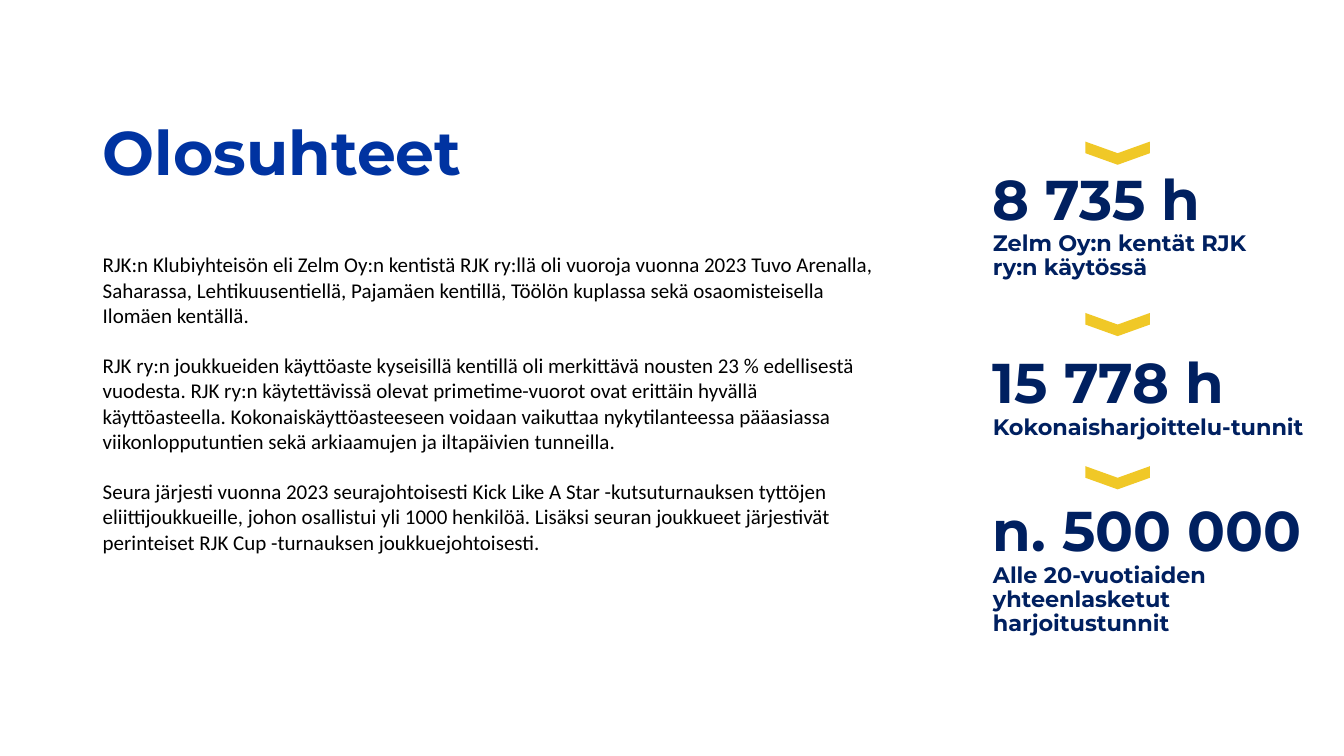
"""Build the Olosuhteet slide with body text and three key figures."""
from dataclasses import dataclass

from pptx import Presentation
from pptx.dml.color import RGBColor
from pptx.enum.shapes import MSO_SHAPE
from pptx.enum.text import MSO_ANCHOR, MSO_AUTO_SIZE, PP_ALIGN
from pptx.slide import Slide
from pptx.text.text import TextFrame
from pptx.util import Emu, Pt

BLUE = RGBColor(0x00, 0x33, 0xA1)
NAVY = RGBColor(0x00, 0x20, 0x60)
YELLOW = RGBColor(0xF0, 0xC8, 0x27)
BLACK = RGBColor(0x00, 0x00, 0x00)
HEAD_FONT = "Montserrat"
BODY_FONT = "Calibri"


@dataclass(frozen=True)
class Stat:
    value: str
    label: str
    top: int
    width: int
    chevron_top: int


STATS = [
    Stat("8 735 h", "Zelm Oy:n kentät RJK ry:n käytössä", 205, 303, 120),
    Stat("15 778 h", "Kokonaisharjoittelu-tunnit", 375, 333, 290),
    Stat("n. 500 000", "Alle 20-vuotiaiden yhteenlasketut harjoitustunnit",
         546, 333, 442),
]

BODY = [
    "RJK:n Klubiyhteisön eli Zelm Oy:n kentistä RJK ry:llä oli vuoroja vuonna "
    "2023 Tuvo Arenalla, Saharassa, Lehtikuusentiellä, Pajamäen kentillä, "
    "Töölön kuplassa sekä osaomisteisella Ilomäen kentällä.",
    "RJK ry:n joukkueiden käyttöaste kyseisillä kentillä oli merkittävä "
    "nousten 23 % edellisestä vuodesta. RJK ry:n käytettävissä olevat "
    "primetime-vuorot ovat erittäin hyvällä käyttöasteella. "
    "Kokonaiskäyttöasteeseen voidaan vaikuttaa nykytilanteessa pääasiassa "
    "viikonlopputuntien sekä arkiaamujen ja iltapäivien tunneilla.",
    "Seura järjesti vuonna 2023 seurajohtoisesti Kick Like A Star "
    "-kutsuturnauksen tyttöjen eliittijoukkueille, johon osallistui yli 1000 "
    "henkilöä. Lisäksi seuran joukkueet järjestivät perinteiset RJK Cup "
    "-turnauksen joukkuejohtoisesti.",
]


def px(n: int) -> Emu:
    return Emu(n * 9144)


def add_line(tf: TextFrame, text: str, size: int, color: RGBColor,
             font: str = HEAD_FONT, bold: bool = True, spacing: float = 0.9,
             gap: int = 0) -> None:
    p = tf.paragraphs[0]
    if p.runs:
        p = tf.add_paragraph()
        p.space_before = Pt(gap)
    else:
        p.space_before = Pt(0)
    p.alignment = PP_ALIGN.LEFT
    p.line_spacing = spacing
    r = p.add_run()
    r.text = text
    r.font.name = font
    r.font.size = Pt(size)
    r.font.bold = bold
    r.font.color.rgb = color


def add_title(s: Slide, text: str) -> None:
    sp = s.shapes.title
    sp.left, sp.top, sp.width, sp.height = px(92), px(82), px(1150), px(145)
    tf = sp.text_frame
    tf.auto_size = MSO_AUTO_SIZE.NONE
    tf.vertical_anchor = MSO_ANCHOR.MIDDLE
    add_line(tf, text, 44, BLUE)


def add_body(s: Slide, texts: list[str]) -> None:
    tf = s.shapes.add_textbox(px(92), px(245), px(791), px(338)).text_frame
    tf.word_wrap = True
    for text in texts:
        add_line(tf, text, 15, BLACK, BODY_FONT, False, 1.0, 18)


def add_stat(s: Slide, stat: Stat) -> None:
    sp = s.shapes.add_shape(MSO_SHAPE.CHEVRON, px(1097), px(stat.chevron_top),
                            px(23), px(64))
    sp.rotation = 90
    sp.shadow.inherit = False
    sp.fill.solid()
    sp.fill.fore_color.rgb = YELLOW
    sp.line.fill.background()

    tf = s.shapes.add_textbox(px(975), px(stat.top), px(stat.width),
                              px(100)).text_frame
    tf.word_wrap = True
    tf.vertical_anchor = MSO_ANCHOR.MIDDLE
    tf.margin_bottom = px(66)
    add_line(tf, stat.value, 40, NAVY)
    add_line(tf, stat.label, 16, NAVY)


def main() -> None:
    prs = Presentation()
    prs.slide_width, prs.slide_height = px(1333), px(750)
    s = prs.slides.add_slide(prs.slide_layouts[5])
    add_title(s, "Olosuhteet")
    add_body(s, BODY)
    for stat in STATS:
        add_stat(s, stat)
    prs.save("out.pptx")


if __name__ == "__main__":
    main()
